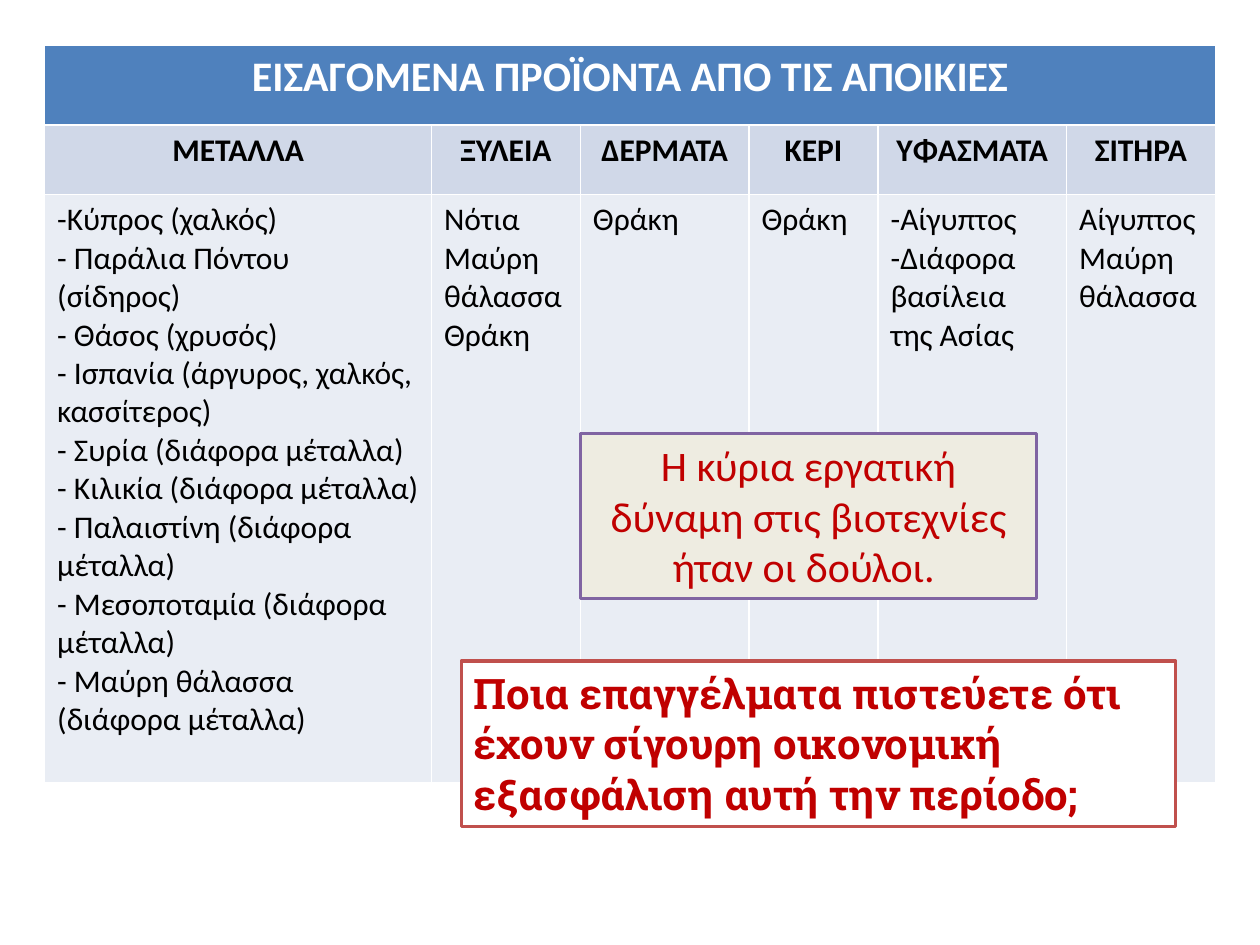
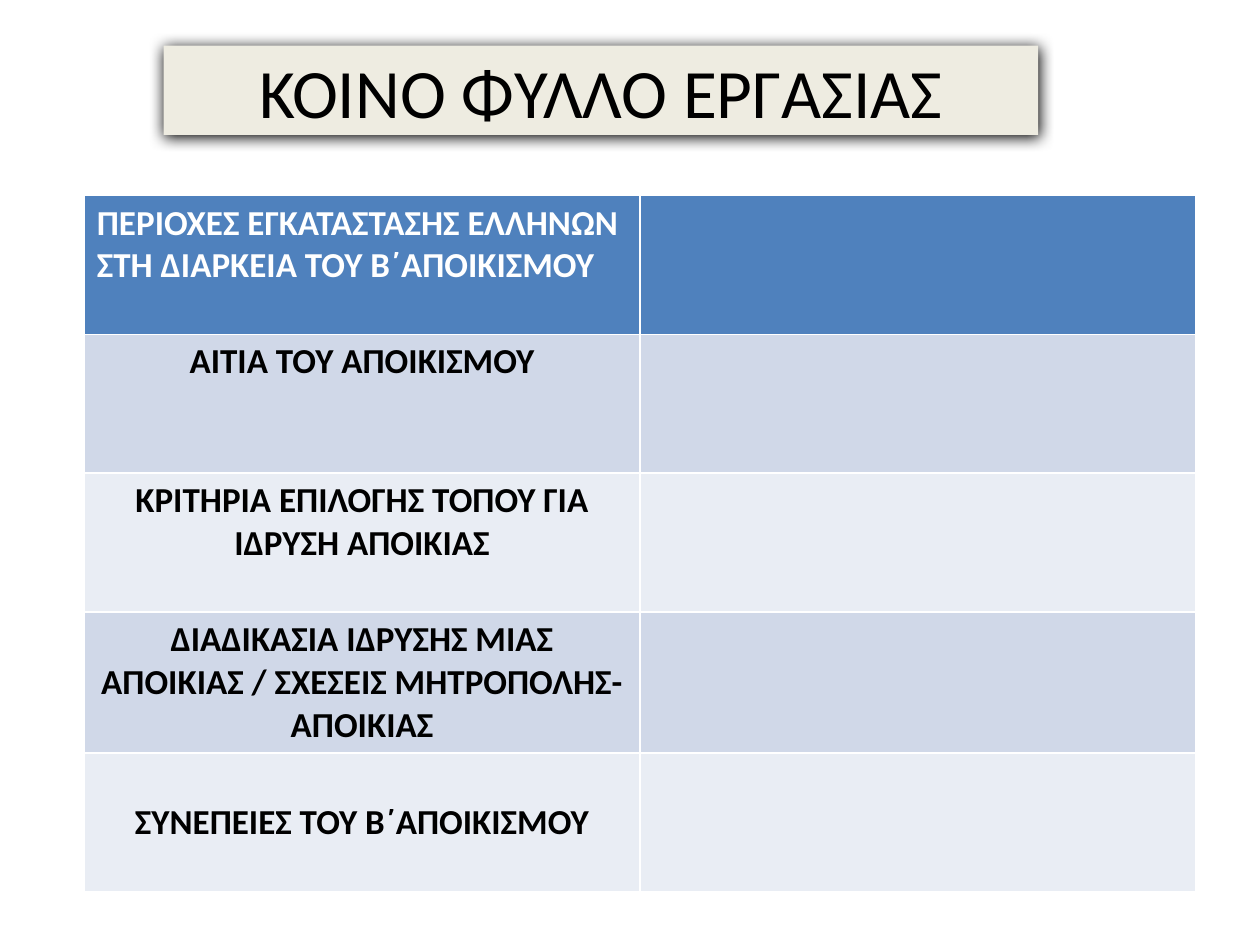
from lxml import etree
from pptx import Presentation
from pptx.dml.color import RGBColor
from pptx.enum.shapes import MSO_SHAPE
from pptx.enum.text import MSO_ANCHOR, MSO_AUTO_SIZE, PP_ALIGN
from pptx.oxml.ns import qn
from pptx.util import Cm, Pt

LEFT, CENTER = PP_ALIGN.LEFT, PP_ALIGN.CENTER
TOP, MIDDLE = MSO_ANCHOR.TOP, MSO_ANCHOR.MIDDLE
NO_AUTOFIT = MSO_AUTO_SIZE.NONE
RECTANGLE = MSO_SHAPE.RECTANGLE

WHITE = RGBColor(0xFF, 0xFF, 0xFF)
BLACK = RGBColor(0x00, 0x00, 0x00)
BLUE = RGBColor(0x4F, 0x81, 0xBD)
DARK_BAND = RGBColor(0xD0, 0xD8, 0xE8)
LIGHT_BAND = RGBColor(0xE9, 0xED, 0xF4)
CREAM = RGBColor(0xEE, 0xEC, 0xE1)
RED = RGBColor(0xC0, 0x00, 0x00)
PURPLE_EDGE = RGBColor(0x80, 0x64, 0xA2)
RED_EDGE = RGBColor(0xC0, 0x50, 0x4D)

BODY_FONT = "Calibri"
QUESTION_FONT = "Roboto Slab"

IMPORTS_TITLE = "ΕΙΣΑΓΟΜΕΝΑ ΠΡΟΪΟΝΤΑ ΑΠΌ ΤΙΣ ΑΠΟΙΚΙΕΣ"
IMPORTS = [
    ("ΜΕΤΑΛΛΑ", 7.8, [
        "-Κύπρος (χαλκός)",
        "- Παράλια Πόντου (σίδηρος)",
        "- Θάσος (χρυσός)",
        "- Ισπανία (άργυρος, χαλκός, κασσίτερος)",
        "- Συρία (διάφορα μέταλλα)",
        "- Κιλικία (διάφορα μέταλλα)",
        "- Παλαιστίνη (διάφορα μέταλλα)",
        "- Μεσοποταμία (διάφορα μέταλλα)",
        "- Μαύρη θάλασσα (διάφορα μέταλλα)",
    ]),
    ("ΞΥΛΕΙΑ", 3, ["Νότια Μαύρη θάλασσα", "Θράκη"]),
    ("ΔΕΡΜΑΤΑ", 3.4, ["Θράκη"]),
    ("ΚΕΡΙ", 2.6, ["Θράκη"]),
    ("ΥΦΑΣΜΑΤΑ", 3.8, ["-Αίγυπτος", "-Διάφορα βασίλεια της Ασίας"]),
    ("ΣΙΤΗΡΑ", 3, ["Αίγυπτος", "Μαύρη θάλασσα"]),
]
IMPORTS_ROWS = [1.6, 1.4, 11.86]

NOTES = [
    ("Η κύρια εργατική δύναμη στις βιοτεχνίες ήταν οι δούλοι. ",
     (11.7, 8.74, 9.2, 3.33), CREAM, PURPLE_EDGE, BODY_FONT, False, CENTER),
    ("Ποια επαγγέλματα πιστεύετε ότι έχουν σίγουρη οικονομική "
     "εξασφάλιση αυτή την περίοδο;",
     (9.3, 13.33, 14.4, 3.33), WHITE, RED_EDGE, QUESTION_FONT, True, LEFT),
]

WORKSHEET_TITLE = "ΚΟΙΝΟ ΦΥΛΛΟ ΕΡΓΑΣΙΑΣ"
WORKSHEET_TOPICS = [
    ("ΠΕΡΙΟΧΕΣ ΕΓΚΑΤΑΣΤΑΣΗΣ ΕΛΛΗΝΩΝ ΣΤΗ ΔΙΑΡΚΕΙΑ ΤΟΥ Β΄ΑΠΟΙΚΙΣΜΟΥ", LEFT, TOP),
    ("ΑΙΤΙΑ ΤΟΥ ΑΠΟΙΚΙΣΜΟΥ", CENTER, TOP),
    ("ΚΡΙΤΗΡΙΑ ΕΠΙΛΟΓΗΣ ΤΟΠΟΥ ΓΙΑ ΙΔΡΥΣΗ ΑΠΟΙΚΙΑΣ", CENTER, TOP),
    ("ΔΙΑΔΙΚΑΣΙΑ ΙΔΡΥΣΗΣ ΜΙΑΣ ΑΠΟΙΚΙΑΣ / ΣΧΕΣΕΙΣ ΜΗΤΡΟΠΟΛΗΣ-ΑΠΟΙΚΙΑΣ", CENTER, TOP),
    ("ΣΥΝΕΠΕΙΕΣ ΤΟΥ Β΄ΑΠΟΙΚΙΣΜΟΥ", CENTER, MIDDLE),
]
WORKSHEET_COLUMNS = [11.2, 11.2]
WORKSHEET_ROW = 2.8


def write(frame, lines, size, color, bold=False, align=LEFT, font=BODY_FONT):
    for index, line in enumerate(lines):
        paragraph = frame.add_paragraph() if index else frame.paragraphs[0]
        paragraph.alignment = align
        run = paragraph.add_run()
        run.text = line
        run.font.name = font
        run.font.size = Pt(size)
        run.font.bold = bold
        run.font.color.rgb = color


def row_fill(row):
    if row == 0:
        return BLUE
    return DARK_BAND if row % 2 else LIGHT_BAND


def add_grid(slide, left, top, widths, heights):
    grid = slide.shapes.add_table(
        len(heights), len(widths), Cm(left), Cm(top),
        Cm(sum(widths)), Cm(sum(heights))).table
    for column, width in zip(grid.columns, widths):
        column.width = Cm(width)
    for index, (row, height) in enumerate(zip(grid.rows, heights)):
        row.height = Cm(height)
        for cell in row.cells:
            cell.fill.solid()
            cell.fill.fore_color.rgb = row_fill(index)
    return grid


def add_note(slide, text, box, fill, edge, font, bold, align):
    note = slide.shapes.add_shape(RECTANGLE, *map(Cm, box))
    note.shadow.inherit = False
    note.fill.solid()
    note.fill.fore_color.rgb = fill
    note.line.color.rgb = edge
    note.line.width = Pt(2)
    note.text_frame.word_wrap = True
    note.text_frame.vertical_anchor = TOP
    write(note.text_frame, [text], 24, RED, bold, align, font)


def add_soft_shadow(shape):
    effects = etree.SubElement(shape.element.spPr, qn("a:effectLst"))
    shadow = etree.SubElement(
        effects, qn("a:outerShdw"), blurRad=str(Pt(8.5)), dist=str(Pt(1)),
        dir="5400000", algn="ctr", rotWithShape="0")
    etree.SubElement(shadow, qn("a:srgbClr"), val=str(BLACK))


def build_imports(prs):
    slide = prs.slides.add_slide(prs.slide_layouts[6])
    widths = [width for _, width, _ in IMPORTS]
    grid = add_grid(slide, 0.9, 0.92, widths, IMPORTS_ROWS)
    heading = grid.cell(0, 0)
    heading.merge(grid.cell(0, len(IMPORTS) - 1))
    write(heading.text_frame, [IMPORTS_TITLE], 24, WHITE, True, CENTER)
    for column, (product, _, places) in enumerate(IMPORTS):
        write(grid.cell(1, column).text_frame, [product], 18, BLACK, True, CENTER)
        write(grid.cell(2, column).text_frame, places, 18, BLACK)
    for note in NOTES:
        add_note(slide, *note)


def build_worksheet(prs):
    slide = prs.slides.add_slide(prs.slide_layouts[5])
    title = slide.shapes.title
    title.left, title.top, title.width, title.height = map(Cm, (3.3, 0.92, 17.63, 1.8))
    title.fill.solid()
    title.fill.fore_color.rgb = CREAM
    add_soft_shadow(title)
    title.text_frame.auto_size = NO_AUTOFIT
    title.text_frame.vertical_anchor = MIDDLE
    write(title.text_frame, [WORKSHEET_TITLE], 39.6, BLACK, align=CENTER)

    heights = [WORKSHEET_ROW] * len(WORKSHEET_TOPICS)
    grid = add_grid(slide, 1.7, 3.94, WORKSHEET_COLUMNS, heights)
    for row, (topic, align, anchor) in enumerate(WORKSHEET_TOPICS):
        cell = grid.cell(row, 0)
        cell.vertical_anchor = anchor
        write(cell.text_frame, [topic], 20, BLACK if row else WHITE, True, align)


def main():
    prs = Presentation()
    prs.slide_width, prs.slide_height = Cm(25.4), Cm(19.05)
    build_imports(prs)
    build_worksheet(prs)
    prs.save("out.pptx")


if __name__ == "__main__":
    main()
